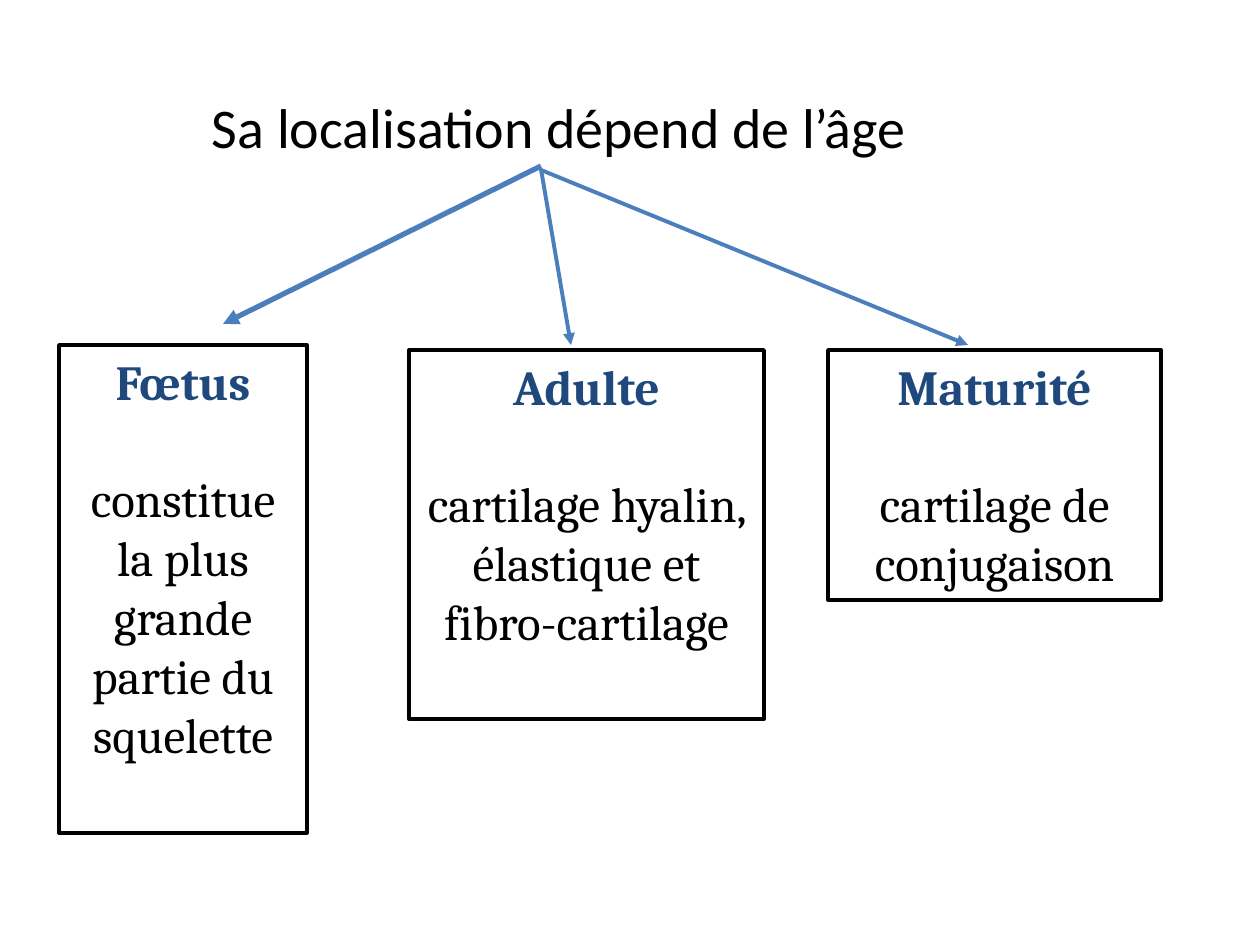
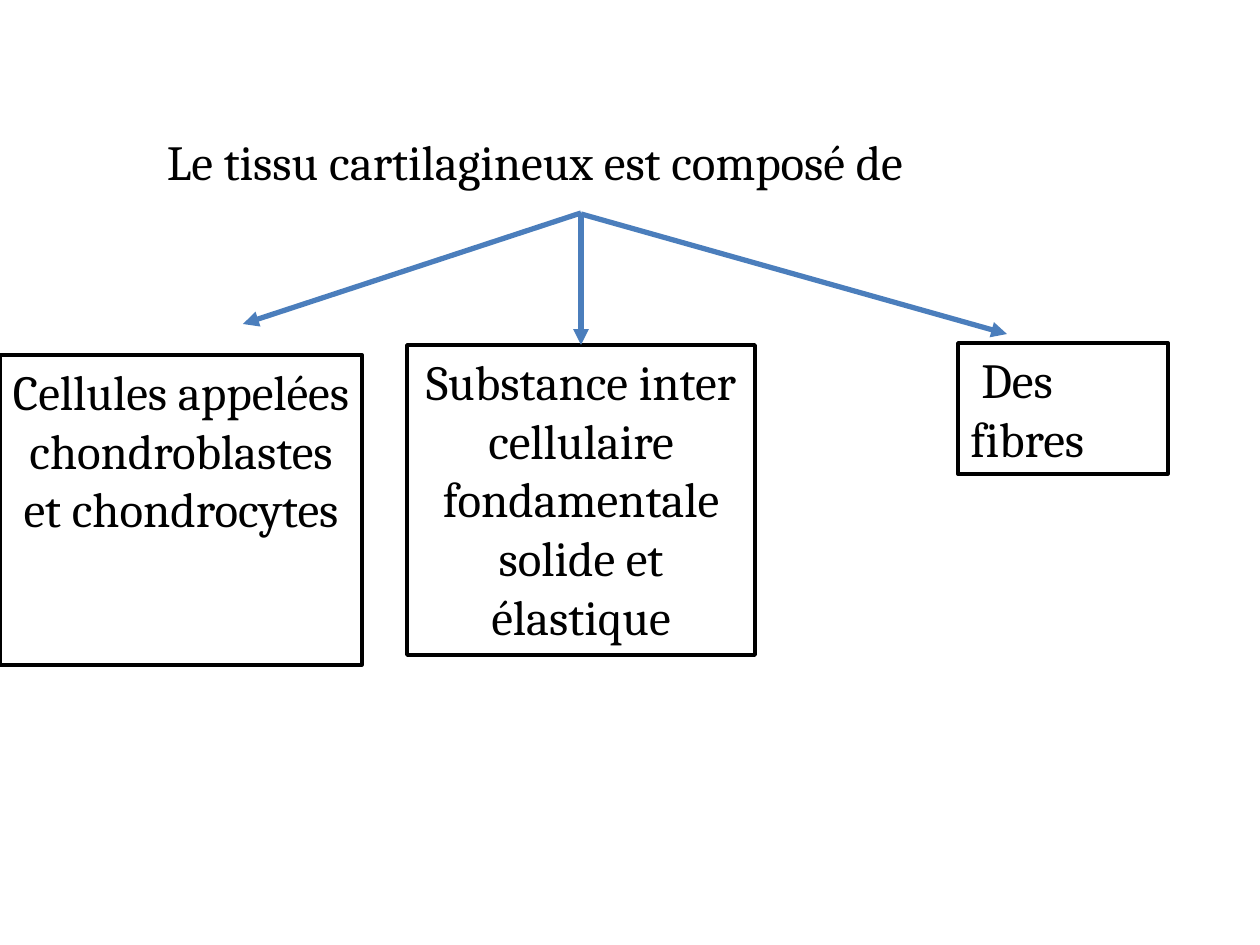
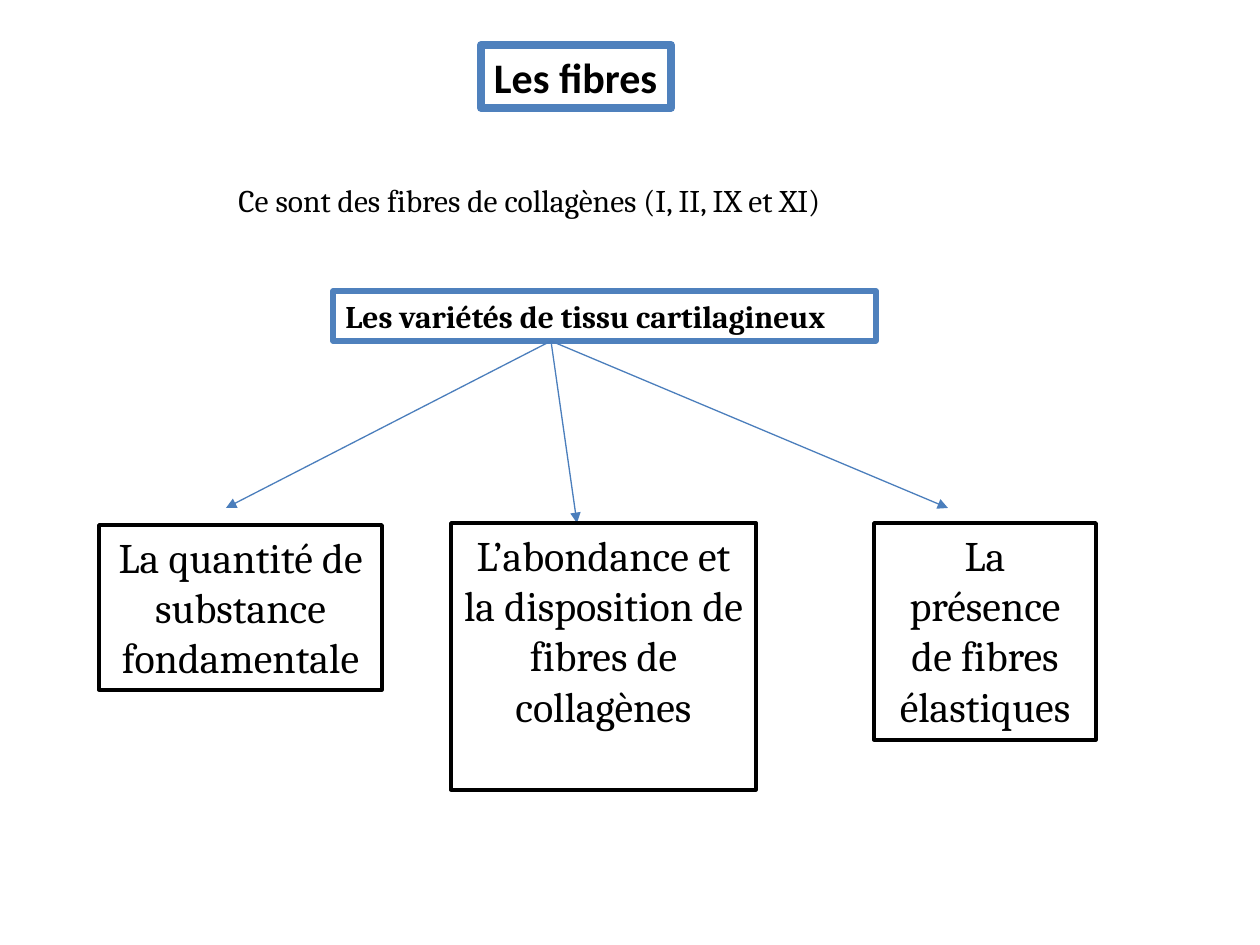
import pptx
import pptx.dml.color
import pptx.enum.shapes
import pptx.enum.text
import pptx.oxml
import pptx.oxml.ns
import pptx.util

PIXEL = pptx.util.Inches(1) / 126
BLACK, WHITE, NAVY = "000000", "FFFFFF", "1F497D"
FRAME_BLUE, ARROW_BLUE = "4F81BD", "4B7EBC"
ALIGN = pptx.enum.text.PP_ALIGN
RECTANGLE = pptx.enum.shapes.MSO_SHAPE.RECTANGLE
TITLE_ONLY = 5
HEADING_GAP = 33.6

# Text formats
AGE_TITLE = {"name": "Calibri", "size": 32, "bold": False}
TISSUE_TITLE = {"name": "Cambria", "size": 28, "bold": False}
FIBRE_TITLE = {"name": "Calibri", "size": 24, "bold": True}
SENTENCE = {"name": "Cambria", "size": 18, "bold": False}
SUBTITLE = {"name": "Cambria", "size": 18, "bold": True}
LARGE = {"name": "Cambria", "size": 28, "bold": False}
MEDIUM = {"name": "Cambria", "size": 24, "bold": False}
HEADING = {"name": "Cambria", "size": 28, "bold": True, "color": NAVY}


def px(value):
    return round(value * PIXEL)


def rgb(color):
    return pptx.dml.color.RGBColor.from_string(color)


def place(shape, box):
    for name, value in zip(("left", "top", "width", "height"), box):
        setattr(shape, name, px(value))


def draw_frame(shape, color, width):
    shape.fill.solid()
    shape.fill.fore_color.rgb = rgb(WHITE)
    shape.line.color.rgb = rgb(color)
    shape.line.width = pptx.util.Pt(width)


def write(shape, paragraphs, alignment=ALIGN.LEFT, **margins):
    """Fill a shape with (text, format) paragraphs, from the top."""
    frame = shape.text_frame
    settings = {
        "word_wrap": True,
        "auto_size": pptx.enum.text.MSO_AUTO_SIZE.NONE,
        "vertical_anchor": pptx.enum.text.MSO_ANCHOR.TOP,
    }
    for name, value in settings.items():
        setattr(frame, name, value)
    for name, value in margins.items():
        setattr(frame, name, px(value))
    for index, (text, text_format) in enumerate(paragraphs):
        paragraph = frame.add_paragraph() if index else frame.paragraphs[0]
        paragraph.alignment = alignment
        run = paragraph.add_run()
        run.text = text
        for name, value in text_format.items():
            if name == "color":
                continue
            setattr(run.font, name, pptx.util.Pt(value) if name == "size" else value)
        run.font.color.rgb = rgb(text_format.get("color", BLACK))


def add_titled_slide(presentation, text, box, text_format, margin_left=13):
    slide = presentation.slides.add_slide(presentation.slide_layouts[TITLE_ONLY])
    title = slide.shapes.title
    place(title, box)
    write(title, [(text, text_format)], margin_left=margin_left, margin_right=0)
    return slide


def add_text(slide, text, box, text_format):
    shape = slide.shapes.add_textbox(*map(px, box))
    write(shape, [(text, text_format)])


def add_box(slide, box, paragraphs, alignment=ALIGN.CENTER, color=BLACK, width=2):
    shape = slide.shapes.add_shape(RECTANGLE, *map(px, box))
    shape.shadow.inherit = False
    draw_frame(shape, color, width)
    write(shape, paragraphs, alignment)
    return shape


def add_headed_box(slide, box, heading, text, width=2):
    shape = add_box(slide, box, [(heading, HEADING), (text, LARGE)], width=width)
    shape.text_frame.paragraphs[0].space_after = pptx.util.Pt(HEADING_GAP)


def add_arrow(slide, start, end, width, target=None):
    arrow = slide.shapes.add_connector(
        pptx.enum.shapes.MSO_CONNECTOR.STRAIGHT, *map(px, start + end))
    arrow.line.color.rgb = rgb(ARROW_BLUE)
    arrow.line.width = pptx.util.Pt(width)
    line = arrow.line._get_or_add_ln()
    line.append(pptx.oxml.parse_xml(
        f'<a:tailEnd {pptx.oxml.ns.nsdecls("a")} type="triangle"/>'))
    arrow._element.spPr.append(pptx.oxml.parse_xml(
        f'<a:effectLst {pptx.oxml.ns.nsdecls("a")}/>'))
    if target is not None:
        arrow.end_connect(target, 0)


def build_age_slide(presentation):
    slide = add_titled_slide(presentation, "Sa localisation dépend de l’âge",
                             (184, 86, 1040, 81), AGE_TITLE, margin_left=28)
    add_headed_box(slide, (59, 345, 248, 488), "Fœtus",
                   "constitue la plus grande partie du squelette")
    add_headed_box(slide, (409, 350, 355, 369), "Adulte",
                   "cartilage hyalin, élastique et fibro-cartilage", 2.25)
    add_headed_box(slide, (828, 350, 333, 250), "Maturité",
                   "cartilage de conjugaison")
    add_arrow(slide, (541, 166), (223, 324), 3)
    add_arrow(slide, (541, 169), (571, 345), 2.25)
    add_arrow(slide, (541, 170), (968, 345), 2.25)


def build_composition_slide(presentation):
    slide = add_titled_slide(presentation, "Le tissu cartilagineux est composé de",
                             (154, 125, 852, 72), TISSUE_TITLE)
    add_box(slide, (0, 355, 362, 310),
            [("Cellules appelées chondroblastes et chondrocytes", LARGE)])
    substance = add_box(
        slide, (407, 345, 348, 310),
        [("Substance inter cellulaire fondamentale solide et élastique", LARGE)])
    fibres = add_box(slide, (958, 343, 210, 131), [("Des fibres", LARGE)], ALIGN.LEFT)
    # First-line indent
    properties = fibres.text_frame.paragraphs[0]._p.get_or_add_pPr()
    properties.set("indent", str(px(11)))
    add_arrow(slide, (581, 213), (243, 324), 3)
    add_arrow(slide, (581, 213), (581, 345), 3, substance)
    add_arrow(slide, (581, 214), (1007, 334), 3)


def build_fibres_slide(presentation):
    slide = add_titled_slide(presentation, "Les fibres", (481, 45, 190, 63), FIBRE_TITLE)
    draw_frame(slide.shapes.title, FRAME_BLUE, 4.5)
    add_text(slide, "Ce sont des fibres de collagènes (I, II, IX et XI)",
             (226, 175, 702, 50), SENTENCE)
    add_box(slide, (333, 291, 543, 50),
            [("Les variétés de tissu cartilagineux", SUBTITLE)],
            ALIGN.LEFT, FRAME_BLUE, 3)
    for end in ((226, 508), (577, 523), (948, 508)):
        add_arrow(slide, (551, 341), end, 0.75)
    criteria = (
        ((99, 525, 283, 165), "La quantité de substance fondamentale"),
        ((451, 523, 305, 267), "L’abondance et la disposition de fibres de collagènes"),
        ((874, 523, 222, 217), "La présence de fibres élastiques"),
    )
    for box, text in criteria:
        add_box(slide, box, [(text, MEDIUM)])


def main():
    presentation = pptx.Presentation()
    presentation.slide_width = px(1260)
    presentation.slide_height = px(945)
    build_age_slide(presentation)
    build_composition_slide(presentation)
    build_fibres_slide(presentation)
    presentation.save("out.pptx")


if __name__ == "__main__":
    main()
